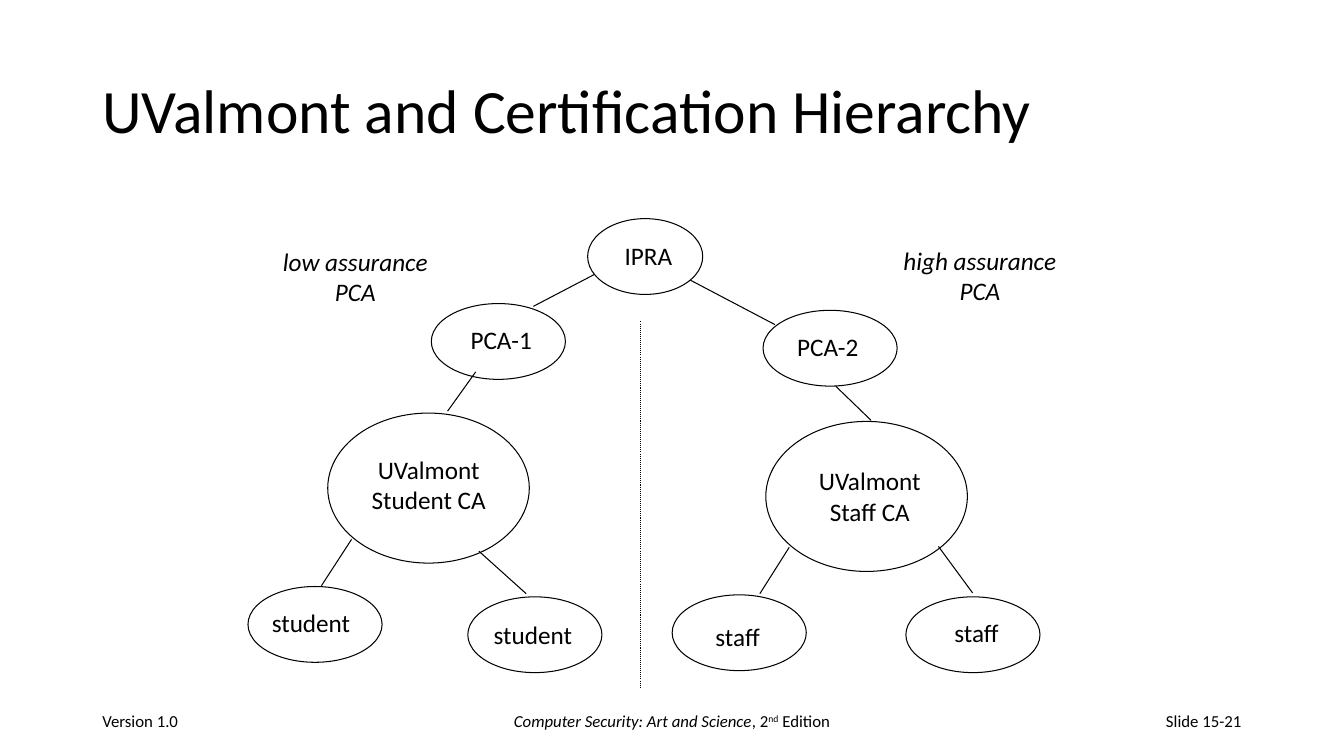
from dataclasses import dataclass

from lxml.etree import SubElement
from pptx import Presentation
from pptx.dml.color import RGBColor
from pptx.enum.dml import MSO_LINE_DASH_STYLE as Dash
from pptx.enum.shapes import MSO_CONNECTOR as Connector, MSO_SHAPE as Shape
from pptx.enum.text import MSO_ANCHOR as Anchor, MSO_AUTO_SIZE as AutoSize, PP_ALIGN as Align
from pptx.oxml.ns import qn
from pptx.slide import Slide
from pptx.util import Cm, Pt

COLORS = {"ink": "000000"}
FONT = "Calibri"
LINE_WIDTH = Pt(0.75)
ROOT, SMALL, LARGE = (2.9, 1.91), (3.38, 1.91), (5.08, 3.78)  # ellipse sizes in cm


@dataclass(frozen=True)
class Node:
    text: str
    left: float
    top: float
    size: tuple[float, float]
    label_left: float
    label_top: float
    label_width: float


@dataclass(frozen=True)
class Edge:
    x1: float
    y1: float
    x2: float
    y2: float
    dash: Dash | None = None


@dataclass(frozen=True)
class Run:
    text: str
    italic: bool = False
    superscript: bool = False


NODES = [
    Node("IPRA", 14.81, 5.51, ROOT, 15.49, 5.92, 1.73),
    Node("PCA-1", 10.87, 7.65, SMALL, 11.61, 8.05, 2.08),
    Node("UValmont\nStudent CA", 8.26, 10.41, LARGE, 9.09, 11.33, 3.43),
    Node("student", 6.25, 14.78, SMALL, 6.6, 15.19, 2.51),
    Node("student", 11.79, 15.04, SMALL, 12.19, 15.47, 2.51),
    Node("PCA-2", 19.23, 7.82, SMALL, 19.84, 8.23, 2.08),
    Node("UValmont\nStaff CA", 19.3, 10.62, LARGE, 20.37, 11.61, 3.1),
    Node("staff", 16.94, 14.99, SMALL, 17.78, 15.52, 1.65),
    Node("staff", 22.83, 15.04, SMALL, 23.8, 15.44, 1.65),
]

EDGES = [
    Edge(14.99, 6.91, 13.44, 7.72),
    Edge(11.99, 9.37, 11.28, 10.36),
    Edge(8.86, 13.59, 8.1, 14.76),
    Edge(12.07, 13.89, 13.26, 14.96),
    Edge(17.4, 7.06, 19.53, 8.18),
    Edge(21.06, 9.73, 21.95, 10.59),
    Edge(19.89, 13.79, 19.15, 14.96),
    Edge(23.65, 13.77, 24.51, 14.94),
    Edge(16.15, 8.1, 16.15, 17.35, Dash.ROUND_DOT),  # divider between the branches
]

EDITION = [
    Run("Computer Security: Art and Science", italic=True),
    Run(", 2"),
    Run("nd", superscript=True),
    Run(" Edition"),
]


def color(name: str) -> RGBColor:
    return RGBColor.from_string(COLORS[name])


def add_text(slide: Slide, text: str | list[Run], left: float, top: float,
             width: float, height: float, *, size: float = 18, italic: bool = False,
             align: Align = Align.LEFT, anchor: Anchor = Anchor.TOP,
             wrap: bool = False, line_spacing: float | None = None) -> None:
    """Add a text box; text is plain lines or one line of formatted runs."""
    box = slide.shapes.add_textbox(Cm(left), Cm(top), Cm(width), Cm(height))
    frame = box.text_frame
    frame.word_wrap = wrap
    frame.auto_size = AutoSize.NONE if wrap else AutoSize.SHAPE_TO_FIT_TEXT
    frame.vertical_anchor = anchor
    lines = [[Run(line, italic)] for line in text.split("\n")] if isinstance(text, str) else [text]
    for index, line in enumerate(lines):
        paragraph = frame.add_paragraph() if index else frame.paragraphs[0]
        paragraph.alignment = align
        if line_spacing:
            paragraph.line_spacing = line_spacing
        for part in line:
            run = paragraph.add_run()
            run.text = part.text
            run.font.name = FONT
            run.font.size = Pt(size)
            run.font.italic = part.italic
            run.font.color.rgb = color("ink")
            if part.superscript:
                run._r.get_or_add_rPr().set("baseline", "30000")


def add_label(slide: Slide, text: str, left: float, top: float, width: float,
              italic: bool = False) -> None:
    several = "\n" in text
    add_text(slide, text, left, top, width, 1.8 if several else 1.02, italic=italic,
             align=Align.CENTER if several else Align.LEFT)


def add_node(slide: Slide, node: Node) -> None:
    width, height = node.size
    ellipse = slide.shapes.add_shape(
        Shape.OVAL, Cm(node.left), Cm(node.top), Cm(width), Cm(height))
    ellipse.shadow.inherit = False
    ellipse.fill.background()
    ellipse.line.color.rgb = color("ink")
    ellipse.line.width = LINE_WIDTH
    add_label(slide, node.text, node.label_left, node.label_top, node.label_width)


def add_edge(slide: Slide, edge: Edge) -> None:
    connector = slide.shapes.add_connector(
        Connector.STRAIGHT, Cm(edge.x1), Cm(edge.y1), Cm(edge.x2), Cm(edge.y2))
    connector.line.color.rgb = color("ink")
    connector.line.width = LINE_WIDTH
    if edge.dash is not None:
        connector.line.dash_style = edge.dash
    SubElement(connector._element.spPr, qn("a:effectLst"))


def main() -> None:
    presentation = Presentation()
    presentation.slide_width, presentation.slide_height = Cm(33.87), Cm(19.05)
    slide = presentation.slides.add_slide(presentation.slide_layouts[6])

    # Title
    add_text(slide, "UValmont and Certification Hierarchy", 2.33, 1.01, 29.21, 3.68,
             size=44, anchor=Anchor.MIDDLE, wrap=True, line_spacing=0.9)

    # Certification tree
    for node in NODES:
        add_node(slide, node)
    for edge in EDGES:
        add_edge(slide, edge)

    # Branch captions
    add_label(slide, "low assurance\nPCA", 6.86, 6.07, 4.19, italic=True)
    add_label(slide, "high assurance\nPCA", 22.5, 6.05, 4.39, italic=True)

    # Footer
    for text, left, width, align in [
        ("Version 1.0", 2.33, 7.62, Align.LEFT),
        (EDITION, 11.22, 11.43, Align.CENTER),
        ("Slide 15-21", 23.92, 7.62, Align.RIGHT),
    ]:
        add_text(slide, text, left, 17.66, width, 1.01, size=12, align=align,
                 anchor=Anchor.MIDDLE, wrap=True)

    presentation.save("out.pptx")


if __name__ == "__main__":
    main()
